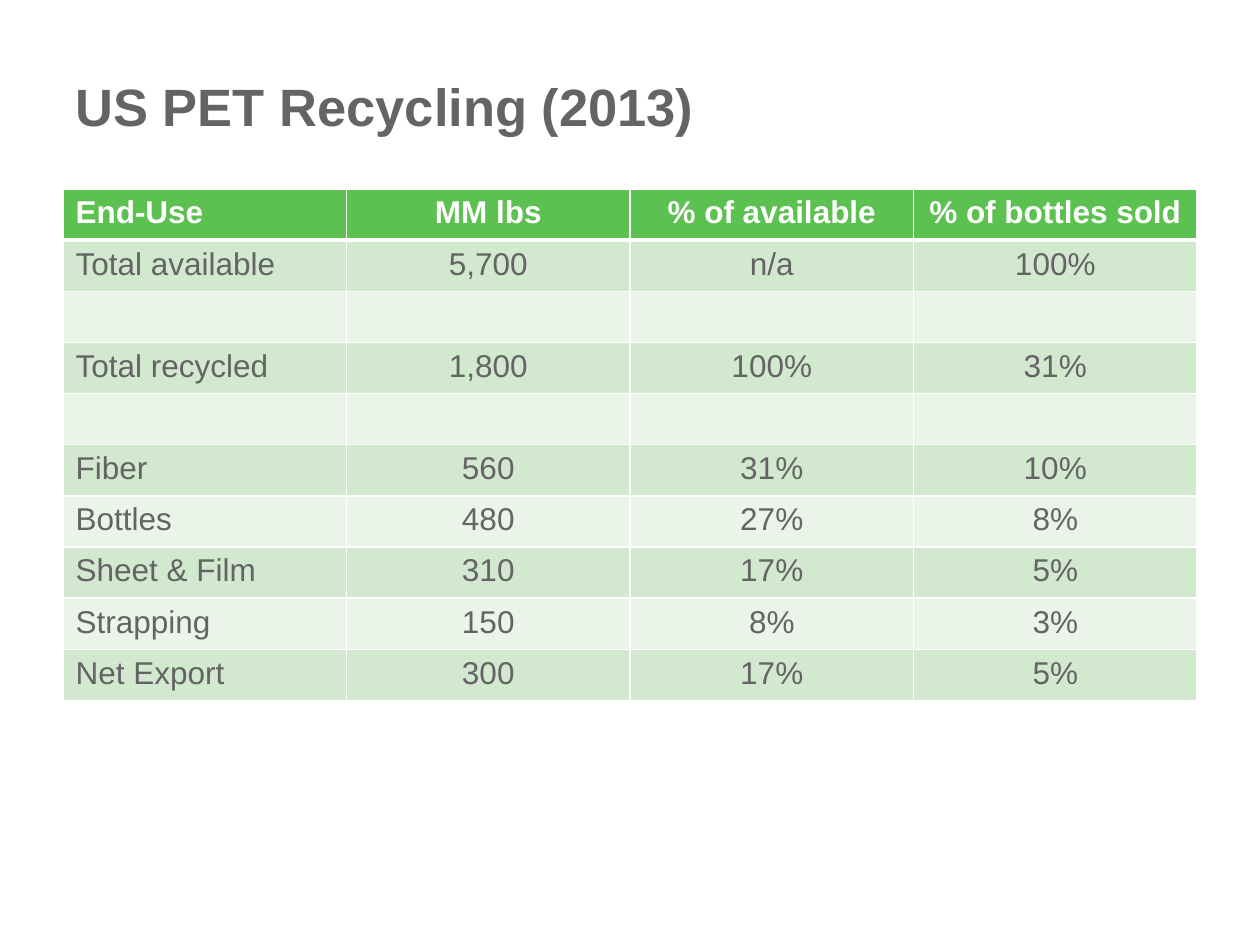
from lxml.etree import SubElement
from pptx import Presentation
from pptx.dml.color import RGBColor
from pptx.enum.text import MSO_ANCHOR, PP_ALIGN
from pptx.oxml.ns import qn
from pptx.util import Inches, Pt

TITLE = "US PET Recycling (2013)"
ROWS = [
    ("End-Use", "MM lbs", "% of available", "% of bottles sold"),
    ("Total available", "5,700", "n/a", "100%"),
    ("", "", "", ""),
    ("Total recycled", "1,800", "100%", "31%"),
    ("", "", "", ""),
    ("Fiber", "560", "31%", "10%"),
    ("Bottles", "480", "27%", "8%"),
    ("Sheet & Film", "310", "17%", "5%"),
    ("Strapping", "150", "8%", "3%"),
    ("Net Export", "300", "17%", "5%"),
]
COLORS = {"text": "646464", "header": "5CC151", "odd": "D2E9D0",
          "even": "EAF4E9", "white": "FFFFFF"}
TITLE_FONT = {"name": "Arial", "size": Pt(30), "bold": True}
HEADER_FONT = {"name": "Arial", "size": Pt(18), "bold": True}
BODY_FONT = {**HEADER_FONT, "bold": False}


def write(paragraph, text, font, color, align):
    paragraph.alignment = align
    if not text:
        return
    span = paragraph.add_run()
    span.text = text
    for name, value in font.items():
        setattr(span.font, name, value)
    span.font.color.rgb = RGBColor.from_string(COLORS[color])


def add_borders(cell, widths):
    """Draw white cell edges; widths maps an edge letter to points."""
    properties = cell._tc.get_or_add_tcPr()
    for edge, width in widths.items():
        line = SubElement(properties, qn(f"a:ln{edge}"), w=str(Pt(width)))
        fill = SubElement(line, qn("a:solidFill"))
        SubElement(fill, qn("a:srgbClr"), val=COLORS["white"])


deck = Presentation()
deck.slide_width, deck.slide_height = Inches(10), Inches(7.5)
page = deck.slides.add_slide(deck.slide_layouts[5])
margin = int(deck.slide_width * 0.05)
content_width = deck.slide_width - 2 * margin

title = page.shapes.title
title.left, title.top = margin, margin
title.width, title.height = content_width, Inches(1)
frame = title.text_frame
frame.vertical_anchor = MSO_ANCHOR.TOP
frame.margin_top = Inches(0.09)
write(frame.paragraphs[0], TITLE, TITLE_FONT, "text", PP_ALIGN.LEFT)

table = page.shapes.add_table(
    len(ROWS), len(ROWS[0]), margin, title.top + title.height,
    content_width, Inches(4.06)).table
for row_index, values in enumerate(ROWS):
    header = row_index == 0
    band = "header" if header else "odd" if row_index % 2 else "even"
    widths = {"L": 1, "R": 1, "T": 3 if row_index == 1 else 1,
              "B": 3 if header else 1}
    for column, value in enumerate(values):
        cell = table.cell(row_index, column)
        add_borders(cell, widths)
        cell.fill.solid()
        cell.fill.fore_color.rgb = RGBColor.from_string(COLORS[band])
        write(cell.text_frame.paragraphs[0], value,
              HEADER_FONT if header else BODY_FONT,
              "white" if header else "text",
              PP_ALIGN.CENTER if column else PP_ALIGN.LEFT)

deck.save("out.pptx")
